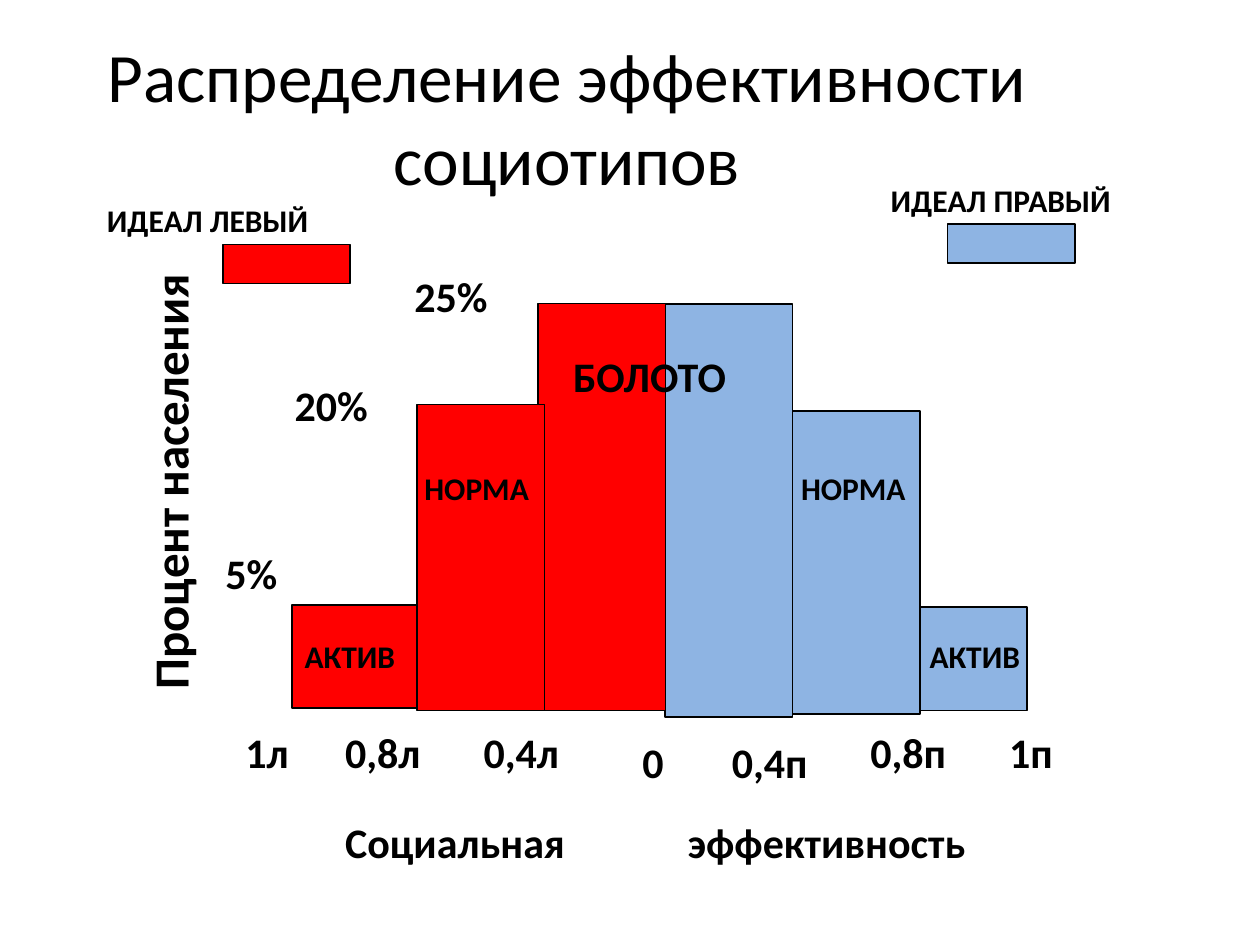
from typing import NamedTuple

from lxml.etree import SubElement
from pptx import Presentation
from pptx.dml.color import RGBColor
from pptx.enum.shapes import MSO_SHAPE as Preset
from pptx.enum.text import MSO_AUTO_SIZE as AutoSize, MSO_ANCHOR as Anchor, PP_ALIGN as Align
from pptx.oxml.ns import qn
from pptx.util import Inches, Pt

RED = RGBColor(0xFF, 0x00, 0x00)
BLUE = RGBColor(0x8E, 0xB4, 0xE3)
BLACK = RGBColor(0x00, 0x00, 0x00)
FONT = "Calibri"
BAR_WIDTH = 1.01


class Bar(NamedTuple):
    left: float
    top: float
    height: float
    color: RGBColor
    width: float = BAR_WIDTH
    line: float = 1


class Label(NamedTuple):
    text: str
    left: float
    top: float
    width: float
    height: float = 0.5
    size: float = 24


# Histogram bars, from back to front
BARS = [
    Bar(5.28, 2.41, 3.28, BLUE),
    Bar(6.29, 3.26, 2.41, BLUE),
    Bar(7.3, 4.82, 0.82, BLUE, width=0.85),
    Bar(4.27, 2.41, 3.23, RED, line=0.75),
    Bar(2.32, 4.8, 0.82, RED),
    Bar(3.31, 3.21, 2.43, RED, line=0.75),
]
LEGEND_KEYS = [Bar(7.52, 1.78, 0.31, BLUE), Bar(1.77, 1.94, 0.31, RED)]

BAR_NAMES = [
    Label("БОЛОТО", 4.45, 2.73, 1.65),
    Label("АКТИВ", 2.32, 5.01, 0.94, 0.4, 18),
    Label("АКТИВ", 7.28, 5.01, 0.94, 0.4, 18),
    Label("НОРМА", 3.27, 3.67, 1.1, 0.4, 18),
    Label("НОРМА", 6.26, 3.67, 1.1, 0.4, 18),
]
PERCENTAGES = [
    Label("25%", 3.19, 2.1, 0.79),
    Label("20%", 2.24, 2.96, 0.79),
    Label("5%", 1.69, 4.3, 0.79),
]
AXIS_VALUES = [
    Label("1л", 1.85, 5.72, 0.63),
    Label("0,8л", 2.64, 5.72, 0.94),
    Label("0,4л", 3.74, 5.72, 0.87),
    Label("0", 5, 5.8, 0.47),
    Label("0,4п", 5.71, 5.8, 1.02),
    Label("0,8п", 6.81, 5.72, 0.94),
    Label("1п", 7.91, 5.72, 0.71),
]
LEGEND_NAMES = [
    Label("ИДЕАЛ ПРАВЫЙ", 6.97, 1.39, 2.13, 0.4, 18),
    Label("ИДЕАЛ ЛЕВЫЙ", 0.75, 1.55, 2.13, 0.4, 18),
]
HORIZONTAL_AXIS = Label("Социальная\tэффективность", 2.64, 6.43, 5.51)
VERTICAL_AXIS = Label("Процент населения", 1.06, 1.55, 0.67, 4.02, 28)


def format_font(font, size: float, bold: bool) -> None:
    values = {"name": FONT, "size": Pt(size), "bold": bold}
    for name, value in values.items():
        setattr(font, name, value)
    font.color.rgb = BLACK


def add_bar(slide, bar: Bar):
    shape = slide.shapes.add_shape(
        Preset.RECTANGLE, *map(Inches, (bar.left, bar.top, bar.width, bar.height)))
    shape.shadow.inherit = False
    shape.fill.solid()
    shape.fill.fore_color.rgb = bar.color
    shape.line.color.rgb = BLACK
    shape.line.width = Pt(bar.line)
    return shape


def add_label(slide, label: Label):
    shape = slide.shapes.add_textbox(
        *map(Inches, (label.left, label.top, label.width, label.height)))
    frame = shape.text_frame
    frame.word_wrap = True
    frame.auto_size = AutoSize.SHAPE_TO_FIT_TEXT
    run = frame.paragraphs[0].add_run()
    run.text = label.text
    format_font(run.font, label.size, True)
    return shape


def set_title(slide, text: str) -> None:
    title = slide.shapes.title
    box = {"left": 0, "top": 0.3, "width": 9, "height": 1.25}
    for name, value in box.items():
        setattr(title, name, Inches(value))
    frame = title.text_frame
    frame.auto_size = AutoSize.NONE
    frame.vertical_anchor = Anchor.MIDDLE
    paragraph = frame.paragraphs[0]
    paragraph.alignment = Align.CENTER
    run = paragraph.add_run()
    run.text = text
    format_font(run.font, 39.6, False)


def add_tab_stop(shape, position: float) -> None:
    properties = shape.text_frame.paragraphs[0]._p.get_or_add_pPr()
    tabs = SubElement(properties, qn("a:tabLst"))
    SubElement(tabs, qn("a:tab"), pos=str(Inches(position)), algn="l")


def main() -> None:
    presentation = Presentation()
    presentation.slide_width = Inches(10)
    presentation.slide_height = Inches(7.5)
    slide = presentation.slides.add_slide(presentation.slide_layouts[5])

    set_title(slide, "Распределение эффективности социотипов")

    # Histogram and legend
    for bar in BARS + LEGEND_KEYS:
        add_bar(slide, bar)
    for label in BAR_NAMES + PERCENTAGES + AXIS_VALUES + LEGEND_NAMES:
        add_label(slide, label)

    # Axis titles
    add_tab_stop(add_label(slide, HORIZONTAL_AXIS), 2.72)
    vertical_title = add_label(slide, VERTICAL_AXIS)
    vertical_title.text_frame._txBody.bodyPr.set("vert", "vert270")

    presentation.save("out.pptx")


if __name__ == "__main__":
    main()
